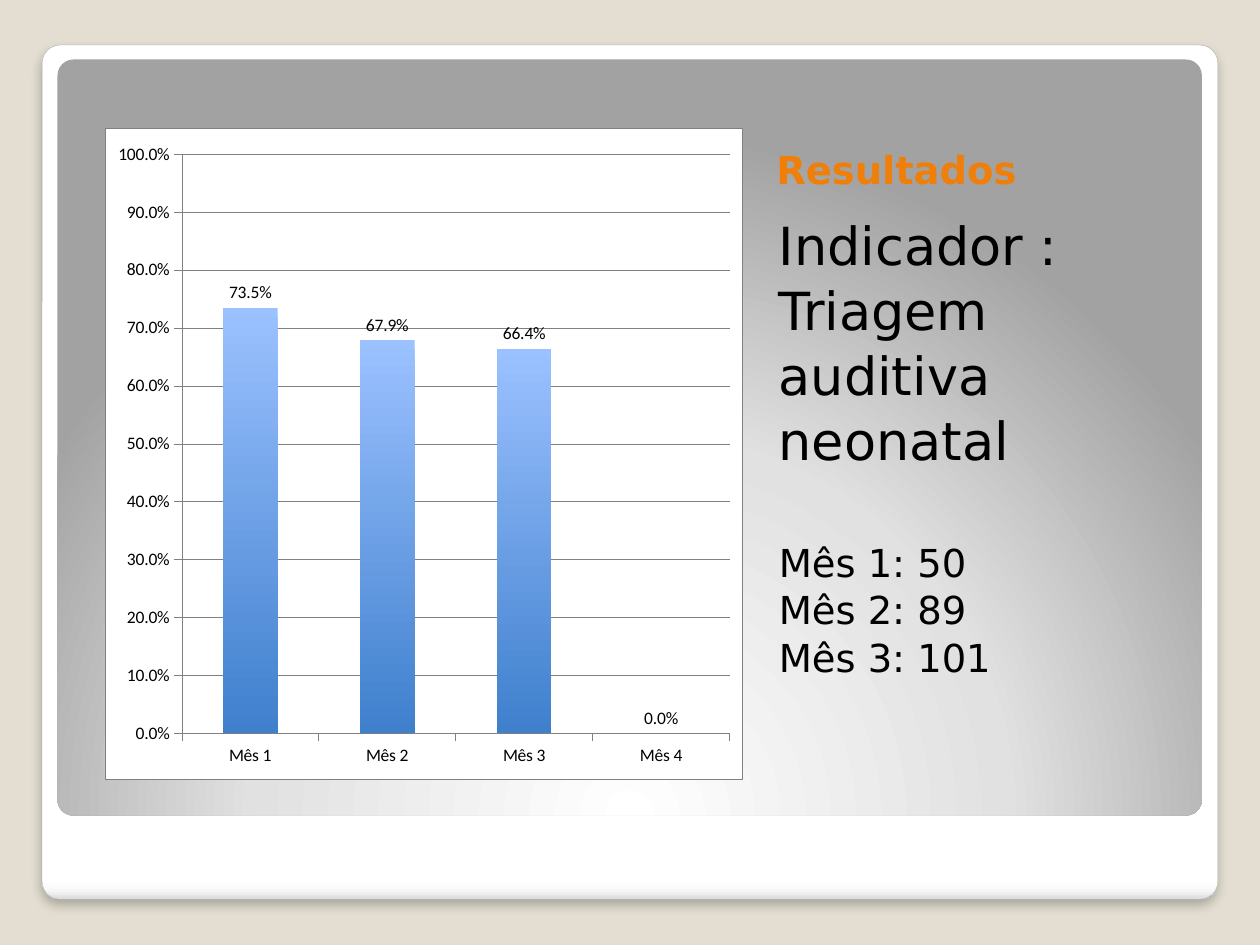
from lxml.etree import fromstring
from pptx import Presentation
from pptx.chart.data import CategoryChartData
from pptx.dml.color import RGBColor
from pptx.enum.chart import XL_CHART_TYPE, XL_LABEL_POSITION, XL_TICK_MARK
from pptx.enum.shapes import MSO_SHAPE
from pptx.enum.text import MSO_ANCHOR
from pptx.oxml.ns import nsdecls, qn
from pptx.util import Cm, Pt

COLORS = {
    "backdrop": "E3DED1", "white": "FFFFFF", "border": "A4A4A4",
    "axis": "808080", "title": "F07F09", "text": "000000",
}
TEXT_FONT, CHART_FONT = "DejaVu Sans", "Calibri"
TITLE = ["Resultados"]
INDICATOR = "Indicador : Triagem auditiva neonatal"
COUNTS = [("Mês 1", 50), ("Mês 2", 89), ("Mês 3", 101)]
RATES = [("Mês 1", 0.735), ("Mês 2", 0.679), ("Mês 3", 0.664), ("Mês 4", 0)]
PERCENT = "0.0%"

LINEAR = '<a:lin ang="5400000" scaled="0"/>'
RADIAL = ('<a:path path="circle"><a:fillToRect l="50000" t="175000" '
          'r="50000" b="-75000"/></a:path>')
CARD_STOPS = [(0, "FFFFFF"), (98, "FFFFFF"), (99, "F7F7F7"), (100, "DADADA")]
PANEL_STOPS = [(0, "FFFFFF"), (55, "E1E1E1"), (100, "A2A2A2")]
BAR_STOPS = [(0, "9BC1FF"), (100, "3F80CD")]
SHADOW = (f'<a:outerShdw {nsdecls("a")} blurRad="{Pt(6)}" dist="{Pt(4)}" '
          'dir="5400000" algn="t" rotWithShape="0"><a:srgbClr val="000000">'
          '<a:alpha val="25000"/></a:srgbClr></a:outerShdw>')


def color(name):
    return RGBColor.from_string(COLORS[name])


def set_gradient(fill, properties, stops, direction):
    fill.solid()
    marks = "".join(f'<a:gs pos="{place * 1000}"><a:srgbClr val="{value}"/></a:gs>'
                    for place, value in stops)
    solid = properties.find(qn("a:solidFill"))
    properties.replace(solid, fromstring(
        f'<a:gradFill {nsdecls("a")} rotWithShape="1"><a:gsLst>{marks}</a:gsLst>'
        f'{direction}</a:gradFill>'))


def set_line(line, name, width):
    line.color.rgb = color(name)
    line.width = Pt(width)


def add_panel(page, area, stops, direction):
    panel = page.shapes.add_shape(MSO_SHAPE.ROUNDED_RECTANGLE, *map(Cm, area))
    panel.adjustments[0] = 0.021
    panel.shadow.inherit = False
    panel.line.fill.background()
    set_gradient(panel.fill, panel._element.spPr, stops, direction)
    return panel


def add_text(page, area, lines, size=22, name="text", bold=False,
             anchor=MSO_ANCHOR.TOP, top=0.13, indent=0, spacing=None):
    box = page.shapes.add_textbox(*map(Cm, area))
    frame = box.text_frame
    frame.word_wrap = True
    frame.vertical_anchor = anchor
    frame.margin_top = Cm(top)
    for number, line in enumerate(lines):
        text, points, before = line if isinstance(line, tuple) else (line, size, 0)
        para = frame.paragraphs[0] if number == 0 else frame.add_paragraph()
        para.space_before = Pt(before)
        para.line_spacing = spacing
        para._p.get_or_add_pPr().set("marL", str(Cm(indent)))
        span = para.add_run()
        span.text = text
        span.font.name, span.font.size = TEXT_FONT, Pt(points)
        span.font.bold, span.font.color.rgb = bold, color(name)
    return box


def chart_background(border):
    line = (f'<a:ln w="{Pt(0.25)}"><a:solidFill><a:srgbClr val="{COLORS["axis"]}"/>'
            '</a:solidFill></a:ln>' if border else '<a:ln><a:noFill/></a:ln>')
    return fromstring(
        f'<c:spPr {nsdecls("c", "a")}><a:solidFill><a:srgbClr val="{COLORS["white"]}"/>'
        f'</a:solidFill>{line}</c:spPr>')


def add_rate_chart(page, area):
    data = CategoryChartData(number_format=PERCENT)
    data.categories = [month for month, rate in RATES]
    data.add_series("Series 1", [rate for month, rate in RATES])
    chart = page.shapes.add_chart(
        XL_CHART_TYPE.COLUMN_CLUSTERED, *map(Cm, area), data).chart
    chart.has_legend = chart.has_title = False
    chart.font.name, chart.font.size = CHART_FONT, Pt(10)
    chart.font.color.rgb = color("text")

    for axis in (chart.category_axis, chart.value_axis):
        axis.major_tick_mark = XL_TICK_MARK.OUTSIDE
        axis.minor_tick_mark = XL_TICK_MARK.NONE
        set_line(axis.format.line, "axis", 0.25)
    values = chart.value_axis
    values.minimum_scale, values.maximum_scale, values.major_unit = 0, 1, 0.1
    values.has_major_gridlines = True
    set_line(values.major_gridlines.format.line, "axis", 0.25)
    values.tick_labels.number_format = PERCENT
    values.tick_labels.number_format_is_linked = False

    plot = chart.plots[0]
    plot.gap_width = 150
    plot.vary_by_categories = False
    plot.has_data_labels = True
    labels = plot.data_labels
    labels.show_value = True
    labels.position = XL_LABEL_POSITION.OUTSIDE_END
    labels.number_format, labels.number_format_is_linked = PERCENT, False
    bars = plot.series[0]
    fill = bars.format.fill
    set_gradient(fill, bars._element.find(qn("c:spPr")), BAR_STOPS, LINEAR)

    root = chart._chartSpace.find(qn("c:chart"))
    root.addnext(chart_background(border=True))
    plot_area = root.find(qn("c:plotArea"))
    plot_area.append(chart_background(border=False))
    for layout in plot_area.findall(qn("c:layout")):
        plot_area.remove(layout)
    places = "".join(f'<c:{key} val="{value}"/>' for key, value in [
        ("layoutTarget", "inner"), ("xMode", "edge"), ("yMode", "edge"),
        ("x", 0.12), ("y", 0.04), ("w", 0.86), ("h", 0.89)])
    plot_area.insert(0, fromstring(
        f'<c:layout {nsdecls("c")}><c:manualLayout>{places}</c:manualLayout></c:layout>'))


deck = Presentation()
deck.slide_width, deck.slide_height = Cm(25.4), Cm(19.05)
page = deck.slides.add_slide(deck.slide_layouts[6])
page.background.fill.solid()
page.background.fill.fore_color.rgb = color("backdrop")

card = add_panel(page, (0.85, 0.91, 23.7, 17.22), CARD_STOPS, LINEAR)
set_line(card.line, "border", 0.16)
card._element.spPr.find(qn("a:effectLst")).append(fromstring(SHADOW))
add_panel(page, (1.16, 1.2, 23.07, 15.24), PANEL_STOPS, RADIAL)

add_text(page, (15.4, 1.47, 8.25, 2.54), TITLE, name="title", bold=True,
         anchor=MSO_ANCHOR.BOTTOM)
body = [(INDICATOR, 30, 0)] + [
    (f"{month}: {count}", 22, 0 if number else 38)
    for number, (month, count) in enumerate(COUNTS)]
add_text(page, (15.4, 4.01, 8.25, 11.68), body, top=0.25, indent=0.05, spacing=1.03)
add_rate_chart(page, (2.12, 2.58, 12.85, 13.13))

deck.save("out.pptx")
